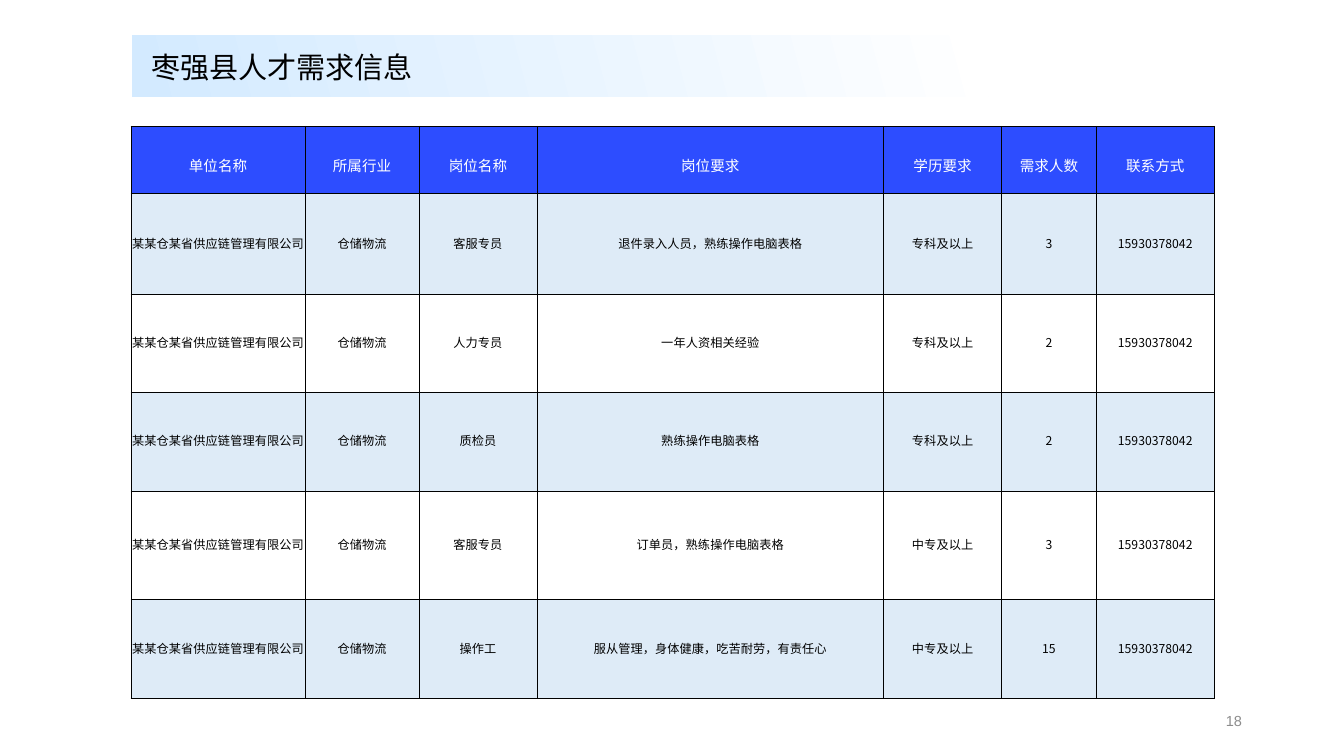
import dataclasses

import lxml.etree
import pptx
import pptx.dml.color
import pptx.enum.shapes
import pptx.enum.text
import pptx.oxml
import pptx.oxml.ns
import pptx.util

Cm = pptx.util.Cm
Pt = pptx.util.Pt
Align = pptx.enum.text.PP_ALIGN
Anchor = pptx.enum.text.MSO_ANCHOR
qn = pptx.oxml.ns.qn


@dataclasses.dataclass(frozen=True)
class Theme:
    """Colours, fonts and type sizes of the slide."""

    ink: str = "000000"
    paper: str = "FFFFFF"
    header: str = "2D4DFF"
    band: str = "DEEBF7"
    banner: str = "D3EAFF"
    muted: str = "8C8C8C"
    cjk_font: str = "Noto Sans CJK SC"
    latin_font: str = "Arial"
    title_size: float = 20.8
    header_size: float = 10.4
    body_size: float = 8.7
    border: float = 0.5


THEME = Theme()

COLUMNS = {
    "单位名称": 4.39,
    "所属行业": 2.87,
    "岗位名称": 2.97,
    "岗位要求": 8.74,
    "学历要求": 2.97,
    "需求人数": 2.39,
    "联系方式": 2.97,
}
ROW_HEIGHTS = [1.7, 2.54, 2.46, 2.49, 2.74, 2.49]
COMPANY = "某某仓某省供应链管理有限公司"
INDUSTRY = "仓储物流"
PHONE = "15930378042"
JOBS = [
    ("客服专员", "退件录入人员，熟练操作电脑表格", "专科及以上", "3"),
    ("人力专员", "一年人资相关经验", "专科及以上", "2"),
    ("质检员", "熟练操作电脑表格", "专科及以上", "2"),
    ("客服专员", "订单员，熟练操作电脑表格", "中专及以上", "3"),
    ("操作工", "服从管理，身体健康，吃苦耐劳，有责任心", "中专及以上", "15"),
]


def rgb(value):
    """Return a colour object for a hex string."""
    return pptx.dml.color.RGBColor.from_string(value)


def apply(target, values):
    """Set each attribute of a dict of format values."""
    for name, value in values.items():
        setattr(target, name, value)


def write(para, text, size, colour, font, **layout):
    """Write one formatted span into a paragraph."""
    apply(para, layout)
    span = para.add_run()
    span.text = text
    apply(span.font, {"name": font, "size": Pt(size)})
    span.font.color.rgb = rgb(colour)
    east_asian = lxml.etree.SubElement(span.font._element, qn("a:ea"))
    east_asian.set("typeface", font)


def add_text(page, box, text, size, colour, font, align, **frame):
    """Place a one-line text box."""
    text_frame = page.shapes.add_textbox(*map(Cm, box)).text_frame
    apply(text_frame, frame)
    write(text_frame.paragraphs[0], text, size, colour, font, alignment=align)


def border_cell(cell):
    """Draw a thin line on all four sides of a cell."""
    properties = cell._tc.get_or_add_tcPr()
    for index, side in enumerate(("lnL", "lnR", "lnT", "lnB")):
        line = pptx.oxml.parse_xml(
            f'<a:{side} {pptx.oxml.ns.nsdecls("a")} w="{Pt(THEME.border)}">'
            f'<a:solidFill><a:srgbClr val="{THEME.ink}"/></a:solidFill></a:{side}>'
        )
        properties.insert(index, line)


def add_title(page, box):
    """Place the fading banner and the title on it."""
    left, top, width, height = box
    banner = page.shapes.add_shape(
        pptx.enum.shapes.MSO_SHAPE.RECTANGLE, *map(Cm, box)
    )
    banner.shadow.inherit = False
    banner.line.fill.background()
    banner.fill.gradient()
    banner.fill.gradient_angle = 15
    for stop, colour in zip(banner.fill.gradient_stops, (THEME.banner, THEME.paper)):
        stop.color.rgb = rgb(colour)
    add_text(
        page, (left + 0.23, top + 0.23, 7.11, 1.14), "枣强县人才需求信息",
        THEME.title_size, THEME.ink, THEME.cjk_font, Align.LEFT,
        word_wrap=False, auto_size=pptx.enum.text.MSO_AUTO_SIZE.SHAPE_TO_FIT_TEXT,
    )


def fill_cell(cell, text, row_index):
    """Write and format one cell by its row."""
    is_header = row_index == 0
    if is_header:
        fill, colour, size, spacing = THEME.header, THEME.paper, THEME.header_size, 1.5
        margins = (0.08, 0.08, 0.08, 0.08)
    else:
        fill = THEME.band if row_index % 2 else THEME.paper
        colour, size, spacing = THEME.ink, THEME.body_size, 1.0
        margins = (0.03, 0.03, 0.03, 0.1)
    sides = ("margin_left", "margin_top", "margin_right", "margin_bottom")
    apply(cell, dict(zip(sides, map(Cm, margins))))
    cell.vertical_anchor = Anchor.MIDDLE
    cell.fill.solid()
    cell.fill.fore_color.rgb = rgb(fill)
    border_cell(cell)
    write(
        cell.text_frame.paragraphs[0], text, size, colour, THEME.cjk_font,
        alignment=Align.CENTER, line_spacing=spacing,
    )


def add_jobs_table(page, box):
    """Place the table of vacancies."""
    rows = [tuple(COLUMNS)] + [(COMPANY, INDUSTRY, *job, PHONE) for job in JOBS]
    table = page.shapes.add_table(len(rows), len(COLUMNS), *map(Cm, box)).table
    apply(table, {"first_row": False, "horz_banding": False})
    for column, width in zip(table.columns, COLUMNS.values()):
        column.width = Cm(width)
    for row_index, (row, height) in enumerate(zip(table.rows, ROW_HEIGHTS)):
        row.height = Cm(height)
        for cell, text in zip(row.cells, rows[row_index]):
            fill_cell(cell, text, row_index)


def add_page_number(page, box):
    """Place the page number at the lower right."""
    add_text(
        page, box, "18", THEME.header_size, THEME.muted, THEME.latin_font,
        Align.RIGHT, word_wrap=True, vertical_anchor=Anchor.MIDDLE,
    )


def main():
    """Build the slide and save the deck."""
    deck = pptx.Presentation()
    apply(deck, {"slide_width": Cm(33.87), "slide_height": Cm(19.05)})
    page = deck.slides.add_slide(deck.slide_layouts[6])
    add_title(page, (3.33, 0.89, 21.59, 1.55))
    add_jobs_table(page, (3.3, 3.18, sum(COLUMNS.values()), sum(ROW_HEIGHTS)))
    add_page_number(page, (23.93, 17.65, 7.62, 1.02))
    deck.save("out.pptx")


if __name__ == "__main__":
    main()
